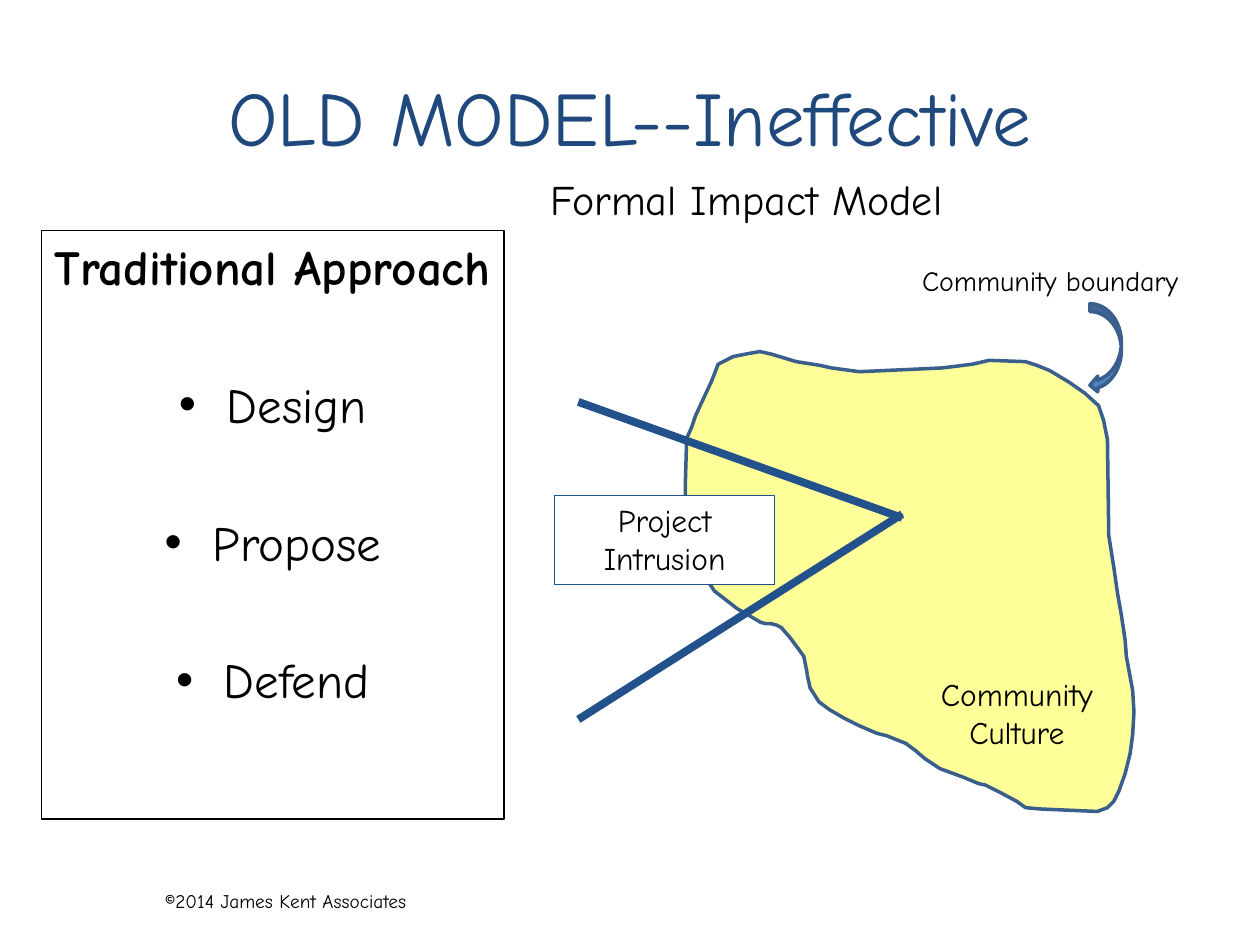
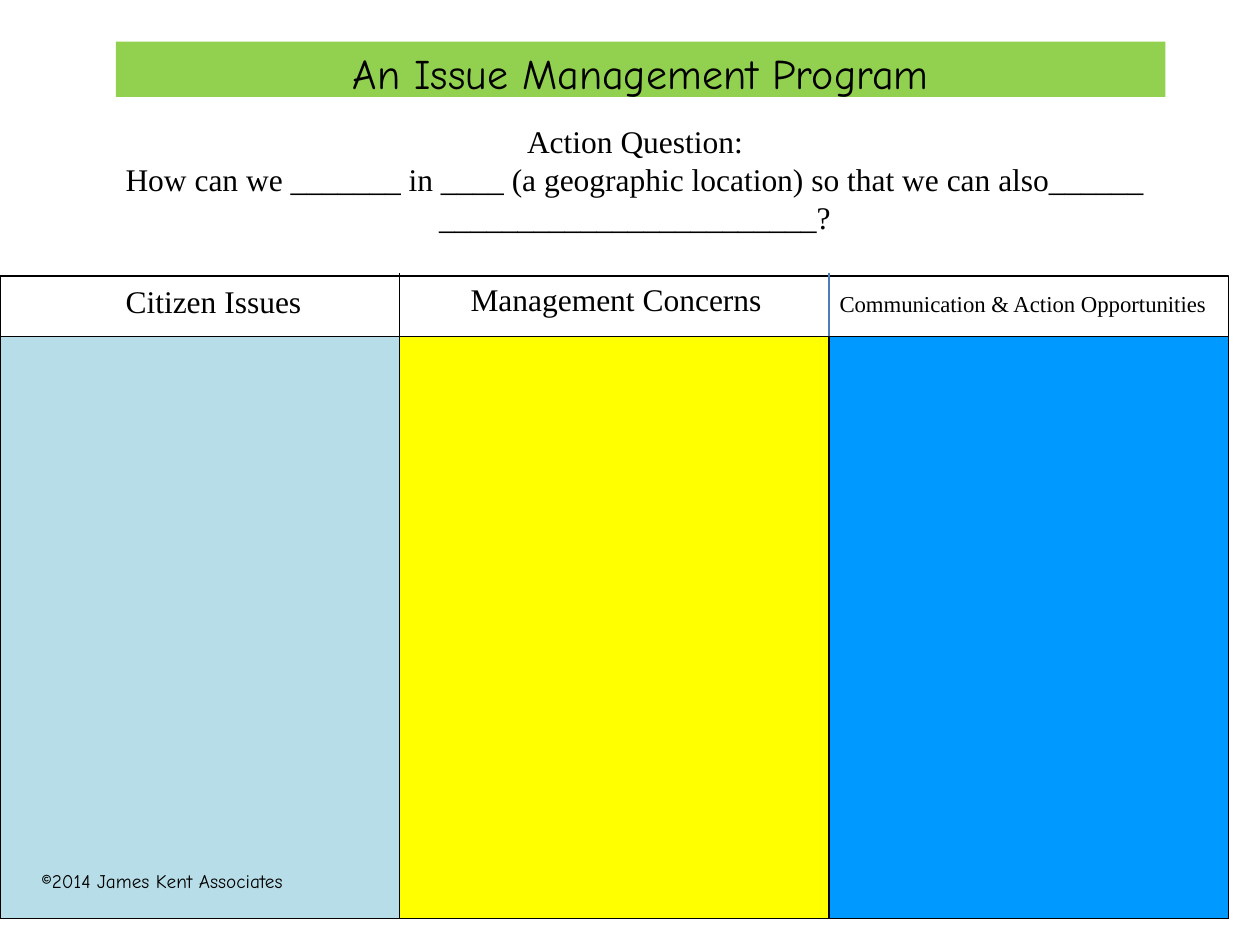
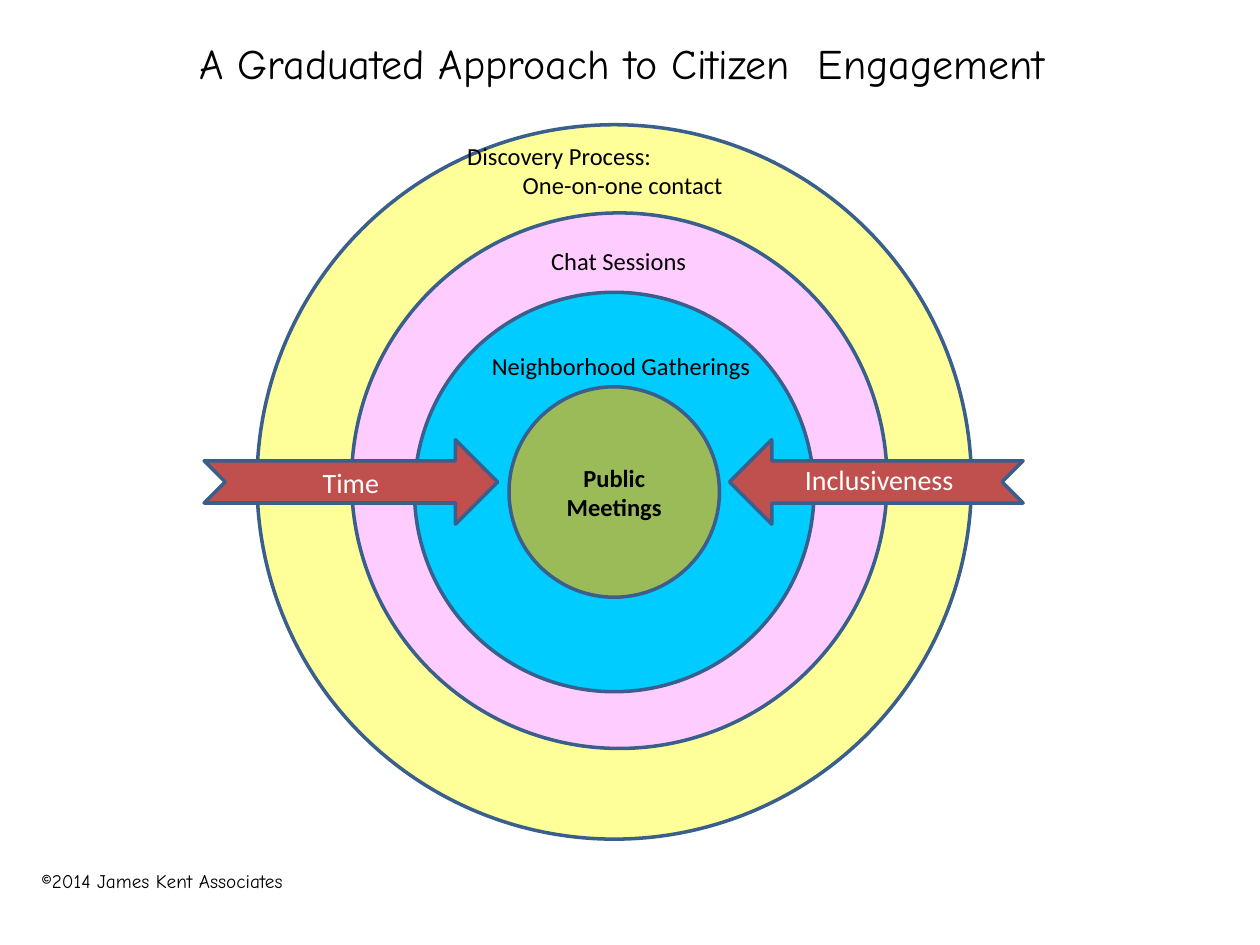
from dataclasses import dataclass

from lxml import etree
from pptx import Presentation
from pptx.dml.color import RGBColor
from pptx.enum.shapes import MSO_CONNECTOR, MSO_SHAPE
from pptx.enum.text import MSO_ANCHOR, MSO_AUTO_SIZE, PP_ALIGN
from pptx.oxml.ns import qn
from pptx.util import Inches, Pt

LEFT, CENTER = PP_ALIGN.LEFT, PP_ALIGN.CENTER
TOP, MIDDLE = MSO_ANCHOR.TOP, MSO_ANCHOR.MIDDLE
RECTANGLE, OVAL = MSO_SHAPE.RECTANGLE, MSO_SHAPE.OVAL
CURVED_ARROW = MSO_SHAPE.CURVED_LEFT_ARROW
NOTCHED_ARROW = MSO_SHAPE.NOTCHED_RIGHT_ARROW
STRAIGHT = MSO_CONNECTOR.STRAIGHT
TITLE_AND_CONTENT, TITLE_ONLY = 1, 5


@dataclass(frozen=True)
class Theme:
    hand: str = "Comic Neue"
    serif: str = "Times New Roman"
    sans: str = "Calibri"
    black: str = "000000"
    white: str = "FFFFFF"
    navy: str = "1F497D"
    outline: str = "3A5F8C"
    intrusion: str = "23518B"
    arrow: str = "4F81BD"
    divider: str = "4B7EBC"
    yellow: str = "FFFF99"
    green: str = "92D050"
    red: str = "C0504D"
    hero: int = 44
    approach: int = 28
    title: int = 24
    body: int = 18
    note: int = 16
    ring: int = 14
    small: int = 13
    footer: int = 11
    thin: float = 0.75
    frame: float = 1
    edge: float = 2
    heavy: float = 4.5


THEME = Theme()
FOOTER = "©2014 James Kent Associates"

APPROACH = ["Traditional Approach", "Design", "Propose", "Defend"]
APPROACH_GAP = 45
BULLET_INDENT = 0.38
COMMUNITY_OUTLINE = [
    (6.04, 4.94), (5.85, 4.83), (5.67, 4.69), (5.59, 4.57), (5.49, 4.35),
    (5.45, 4.21), (5.44, 4.16), (5.44, 3.82), (5.45, 3.48), (5.49, 3.39),
    (5.52, 3.3), (5.65, 3.02), (5.7, 2.89), (5.82, 2.83), (5.92, 2.81),
    (6.03, 2.79), (6.12, 2.81), (6.32, 2.87), (6.51, 2.9), (6.6, 2.92),
    (6.82, 2.95), (7.48, 2.92), (7.72, 2.89), (7.85, 2.86), (8.14, 2.87),
    (8.23, 2.9), (8.33, 2.94), (8.48, 3.03), (8.61, 3.12), (8.72, 3.22),
    (8.76, 3.34), (8.79, 3.49), (8.8, 4.25), (8.84, 4.5), (8.87, 4.71),
    (8.9, 4.88), (8.93, 5.08), (8.94, 5.21), (8.99, 5.48), (9, 5.65),
    (8.99, 5.83), (8.97, 5.98), (8.93, 6.14), (8.88, 6.28), (8.84, 6.36),
    (8.79, 6.41), (8.71, 6.44), (8.25, 6.42), (8.14, 6.41), (8.07, 6.36),
    (7.94, 6.29), (7.82, 6.23), (7.77, 6.22), (7.65, 6.17), (7.46, 6.1),
    (7.34, 6.02), (7.27, 5.96), (7.19, 5.9), (7.04, 5.84), (6.96, 5.82),
    (6.82, 5.76), (6.7, 5.7), (6.58, 5.63), (6.5, 5.57), (6.43, 5.46),
    (6.41, 5.37), (6.4, 5.31), (6.38, 5.21), (6.33, 5.14), (6.27, 5.06),
    (6.2, 4.98), (6.16, 4.96), (6.12, 4.95), (6.08, 4.95),
]
INTRUSION_LINES = [((4.59, 3.19), (7.16, 4.11)), ((7.16, 4.08), (4.59, 5.71))]

ACTION_QUESTION = [
    "Action Question:",
    "How can we _______ in ____ (a geographic location) so that we can also______ "
    "________________________?",
]
COLUMN_EDGES = [0, 3.17, 6.58, 9.75]
COLUMN_FILLS = ["B7DEE8", "FFFF00", "0099FF"]
COLUMN_HEADS = [
    ("Citizen Issues", THEME.body, (0.18, 2.19, 3.03, 0.42)),
    ("Management Concerns", THEME.body, (3.33, 2.17, 3.12, 0.42)),
    ("Communication & Action Opportunities", THEME.small, (6.42, 2.25, 3.39, 0.32)),
]
GRID_TOP, HEAD_BOTTOM, GRID_BOTTOM = 2.19, 2.67, 7.29

RINGS = [  # left, top, diameter, fill
    (2.04, 0.99, 5.67, THEME.yellow),
    (2.79, 1.69, 4.25, "FFCCFF"),
    (3.29, 2.32, 3.17, "00CCFF"),
    (4.04, 3.07, 1.67, "9BBB59"),
]
RING_LABELS = [
    ("Neighborhood Gatherings", (3.72, 2.74, 2.42, 0.34)),
    ("Chat Sessions", (3.37, 1.9, 3.08, 0.34)),
]
DISCOVERY = ["Discovery Process:", "One-on-one contact"]
DISCOVERY_INDENT = 0.44


def inches(values):
    return [Inches(value) for value in values]


def write(shape, lines, size, font=THEME.hand, color=THEME.black,
          align=CENTER, anchor=TOP, bold=False):
    """Fill a shape with one formatted paragraph for each line."""
    frame = shape.text_frame
    frame.text = "\n".join(lines)
    frame_format = {"word_wrap": True, "auto_size": MSO_AUTO_SIZE.NONE,
                    "vertical_anchor": anchor}
    for name, value in frame_format.items():
        setattr(frame, name, value)
    font_format = {"name": font, "size": Pt(size), "bold": bold}
    for paragraph in frame.paragraphs:
        paragraph.alignment = align
        for run in paragraph.runs:
            for name, value in font_format.items():
                setattr(run.font, name, value)
            run.font.color.rgb = RGBColor.from_string(color)
    return frame.paragraphs


def paint(shape, fill=None, line=None, width=THEME.thin):
    if fill:
        shape.fill.solid()
        shape.fill.fore_color.rgb = RGBColor.from_string(fill)
    else:
        shape.fill.background()
    if line:
        shape.line.color.rgb = RGBColor.from_string(line)
        shape.line.width = Pt(width)
    else:
        shape.line.fill.background()


def add_figure(slide, kind, box, fill=None, line=None, width=THEME.thin):
    shape = slide.shapes.add_shape(kind, *inches(box))
    shape.shadow.inherit = False
    paint(shape, fill, line, width)
    return shape


def add_label(slide, box, lines, size, **style):
    return write(slide.shapes.add_textbox(*inches(box)), lines, size, **style)


def add_line(slide, start, end, color=THEME.black, width=THEME.thin):
    line = slide.shapes.add_connector(STRAIGHT, *inches(start + end))
    line.line.color.rgb = RGBColor.from_string(color)
    line.line.width = Pt(width)
    etree.SubElement(line._element.spPr, qn("a:effectLst"))


def place(shape, box):
    for name, value in zip(("left", "top", "width", "height"), inches(box)):
        setattr(shape, name, value)


def set_indent(paragraph, left, first=0, bullet=None):
    properties = paragraph._p.get_or_add_pPr()
    properties.set("marL", str(Inches(left)))
    properties.set("indent", str(Inches(first)))
    if bullet:
        etree.SubElement(properties, qn("a:buChar"), char=bullet)
    else:
        etree.SubElement(properties, qn("a:buNone"))


def start_slide(presentation, layout, title, title_box, footer_at=(0.23, 6.85),
                size=THEME.title, **style):
    """Add a slide with its title and the shared copyright footer."""
    slide = presentation.slides.add_slide(presentation.slide_layouts[layout])
    place(slide.shapes.title, title_box)
    write(slide.shapes.title, [title], size, **style)
    add_label(slide, (*footer_at, 2.44, 0.29), [FOOTER], THEME.footer, align=LEFT)
    return slide


def build_old_model(presentation):
    slide = start_slide(presentation, TITLE_AND_CONTENT, "OLD MODEL--Ineffective",
                        (0.5, 0.5, 9, 1.5), footer_at=(1.21, 7.01),
                        size=THEME.hero, color=THEME.navy)

    approach = slide.placeholders[1]
    place(approach, (0.33, 1.83, 3.67, 4.67))
    paint(approach, line=THEME.black, width=THEME.frame)
    heading, *steps = write(approach, APPROACH, THEME.approach)
    heading.space_before = Pt(0)
    heading.runs[0].font.bold = True
    set_indent(heading, 0)
    for step in steps:
        step.space_before = Pt(APPROACH_GAP)
        set_indent(step, BULLET_INDENT, -BULLET_INDENT, "•")

    first, *others = [inches(point) for point in COMMUNITY_OUTLINE]
    builder = slide.shapes.build_freeform(*first)
    builder.add_line_segments(others, close=True)
    community = builder.convert_to_shape()
    community.shadow.inherit = False
    paint(community, THEME.yellow, THEME.outline, THEME.edge)

    add_label(slide, (7.22, 2.04, 2.34, 0.37), ["Community boundary"],
              THEME.note, align=LEFT)
    add_figure(slide, CURVED_ARROW, (8.65, 2.41, 0.25, 0.71),
               THEME.arrow, THEME.outline, THEME.edge)
    add_label(slide, (7.11, 5.31, 1.92, 0.71), ["Community Culture"], THEME.body)
    for start, end in INTRUSION_LINES:
        add_line(slide, start, end, THEME.intrusion, THEME.heavy)
    intrusion = add_figure(slide, RECTANGLE, (4.4, 3.93, 1.75, 0.71),
                           THEME.white, THEME.intrusion)
    write(intrusion, ["Project Intrusion"], THEME.body)
    add_label(slide, (4.27, 1.33, 4.63, 0.5), ["Formal Impact Model"],
              THEME.title, align=LEFT)


def build_issue_program(presentation):
    slide = start_slide(presentation, TITLE_ONLY, "An Issue Management Program",
                        (0.92, 0.33, 8.33, 0.44))
    paint(slide.shapes.title, THEME.green)
    footer = slide.shapes[-1]
    add_label(slide, (0.5, 0.92, 9.08, 1.01), ACTION_QUESTION, THEME.body,
              font=THEME.serif)

    right = COLUMN_EDGES[-1]
    add_figure(slide, RECTANGLE, (0, GRID_TOP, right, GRID_BOTTOM - GRID_TOP),
               line=THEME.black)
    for left, end, fill in zip(COLUMN_EDGES, COLUMN_EDGES[1:], COLUMN_FILLS):
        add_figure(slide, RECTANGLE,
                   (left, HEAD_BOTTOM, end - left, GRID_BOTTOM - HEAD_BOTTOM),
                   fill, THEME.black)
    add_line(slide, (0, HEAD_BOTTOM), (right, HEAD_BOTTOM))
    for edge, color in zip(COLUMN_EDGES[1:], (THEME.black, THEME.divider)):
        add_line(slide, (edge, 2.17), (edge, HEAD_BOTTOM), color)
    for text, size, box in COLUMN_HEADS:
        add_label(slide, box, [text], size, font=THEME.serif)
    slide.shapes._spTree.append(footer._element)  # keeps it above the columns


def build_engagement(presentation):
    slide = start_slide(presentation, TITLE_ONLY,
                        "A Graduated Approach to Citizen  Engagement",
                        (1.48, 0.25, 7.67, 0.5), align=LEFT)
    ring_style = {"size": THEME.ring, "font": THEME.sans}
    for left, top, diameter, fill in RINGS:
        ring = add_figure(slide, OVAL, (left, top, diameter, diameter),
                          fill, THEME.outline, THEME.edge)
    write(ring, ["Public Meetings"], anchor=MIDDLE, bold=True, **ring_style)
    for text, box in RING_LABELS:
        add_label(slide, box, [text], **ring_style)
    contact = add_label(slide, (3.61, 1.07, 2.88, 0.57), DISCOVERY,
                        align=LEFT, **ring_style)[1]
    set_indent(contact, DISCOVERY_INDENT)

    time, inclusiveness = [
        add_figure(slide, NOTCHED_ARROW, (left, 3.49, 2.33, 0.67),
                   THEME.red, THEME.outline, THEME.edge)
        for left in (1.62, 5.79)
    ]
    inclusiveness.rotation = 180
    arrow_style = {"size": THEME.note, "font": THEME.sans, "color": THEME.white}
    write(time, ["Time"], anchor=MIDDLE, **arrow_style)
    add_label(slide, (6.29, 3.62, 1.83, 0.37), ["Inclusiveness"],
              align=LEFT, **arrow_style)


def main():
    presentation = Presentation()
    presentation.slide_width, presentation.slide_height = inches((10, 7.5))
    for build in (build_old_model, build_issue_program, build_engagement):
        build(presentation)
    presentation.save("out.pptx")


if __name__ == "__main__":
    main()
